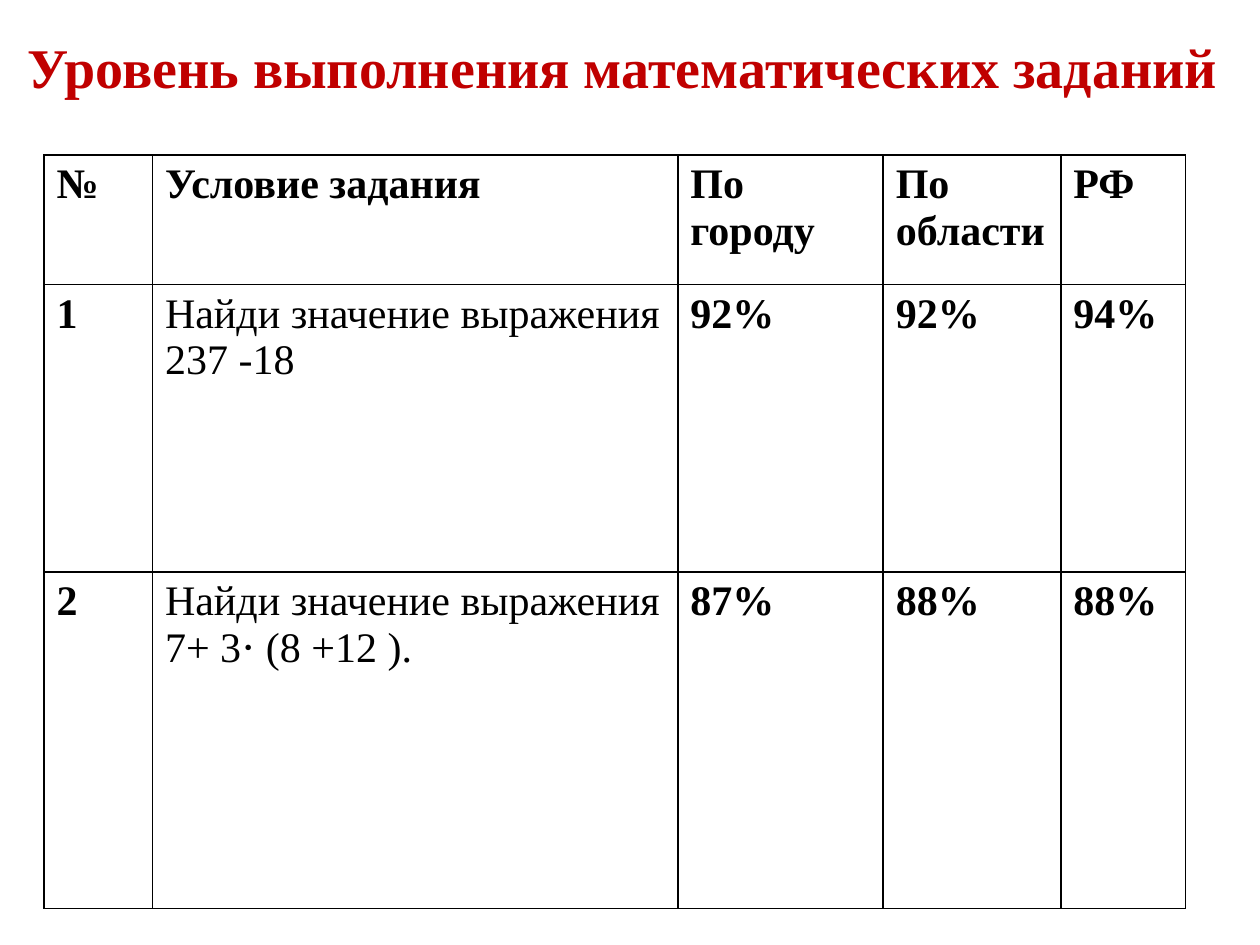
from lxml.etree import SubElement
from pptx import Presentation
from pptx.dml.color import RGBColor
from pptx.enum.text import MSO_ANCHOR, MSO_AUTO_SIZE, PP_ALIGN
from pptx.oxml.ns import qn
from pptx.util import Inches, Pt


def write(frame, text, color, **font_values):
    paragraph = frame.paragraphs[0]
    paragraph.alignment = PP_ALIGN.LEFT
    run = paragraph.add_run()
    run.text = text
    run.font.color.rgb = RGBColor.from_string(color)
    for name, value in {"name": "Times New Roman", **font_values}.items():
        setattr(run.font, name, value)


def add_borders(cell, color):
    properties = cell._tc.get_or_add_tcPr()
    for side in ("lnL", "lnR", "lnT", "lnB"):
        line = SubElement(properties, qn(f"a:{side}"), w=str(Pt(1)))
        fill = SubElement(line, qn("a:solidFill"))
        SubElement(fill, qn("a:srgbClr"), val=color)


prs = Presentation()
prs.slide_width, prs.slide_height = Inches(10), Inches(7.5)
slide = prs.slides.add_slide(prs.slide_layouts[5])

heading = slide.shapes.title
heading_place = {"left": 0.12, "top": 0.21, "width": 9.88, "height": 0.64}
for name, value in heading_place.items():
    setattr(heading, name, Inches(value))
heading_format = {
    "word_wrap": True,
    "auto_size": MSO_AUTO_SIZE.SHAPE_TO_FIT_TEXT,
    "vertical_anchor": MSO_ANCHOR.TOP,
}
for name, value in heading_format.items():
    setattr(heading.text_frame, name, value)
write(heading.text_frame, "Уровень выполнения математических заданий",
      "C00000", size=Pt(32), bold=True)

results = [
    ["№", "Условие задания", "По городу", "По области", "РФ"],
    ["1", "Найди значение выражения 237 -18", "92%", "92%", "94%"],
    ["2", "Найди значение выражения 7+ 3⋅ (8 +12 ).", "87%", "88%", "88%"],
]
column_widths = [0.86, 4.17, 1.63, 1.41, 0.99]
row_heights = [1.03, 2.28, 2.67]

levels = slide.shapes.add_table(
    len(results), len(column_widths), Inches(0.35), Inches(1.23),
    Inches(sum(column_widths)), Inches(sum(row_heights))).table
for column, width in zip(levels.columns, column_widths):
    column.width = Inches(width)
for row, height in zip(levels.rows, row_heights):
    row.height = Inches(height)

for r, task in enumerate(results):
    for c, text in enumerate(task):
        cell = levels.cell(r, c)
        is_condition = r > 0 and c == 1
        write(cell.text_frame, text, "000000", size=Pt(24), bold=not is_condition)
        add_borders(cell, "000000")
        cell.fill.background()

prs.save("out.pptx")
